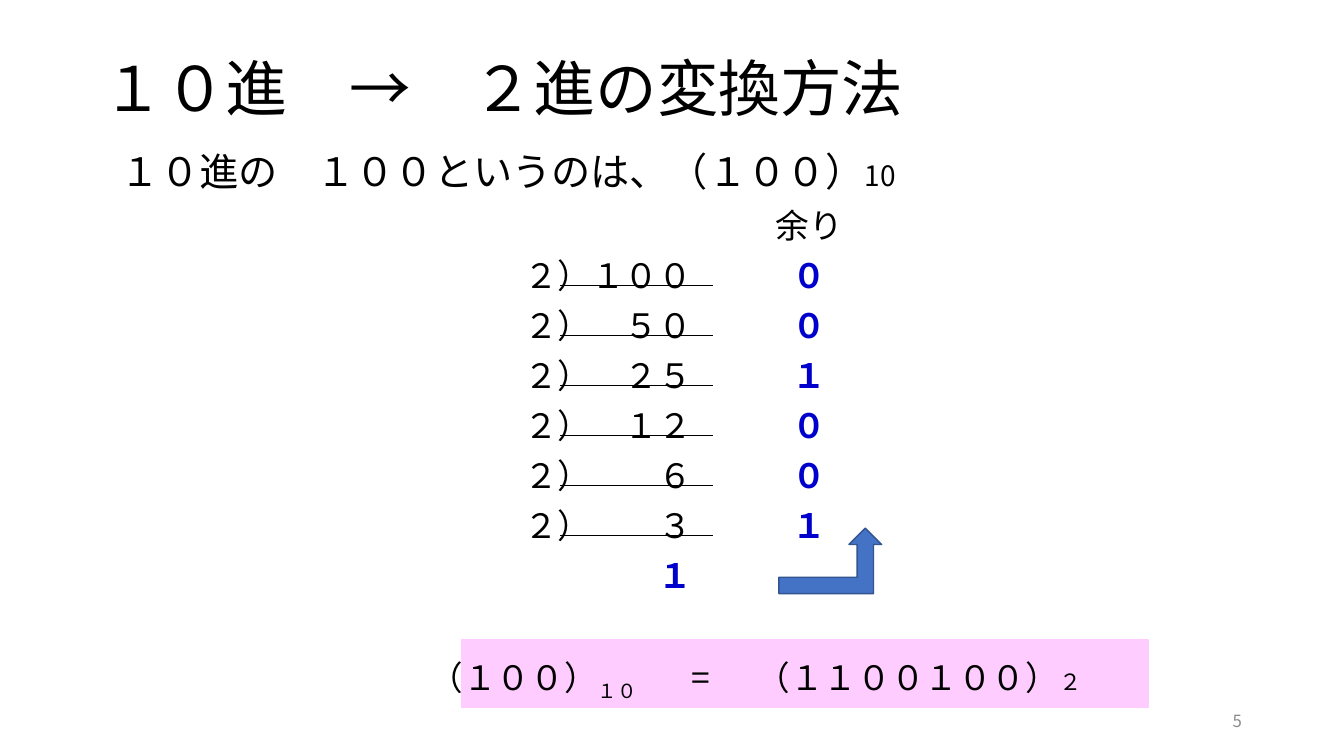
from lxml import etree
from pptx import Presentation
from pptx.dml.color import RGBColor
from pptx.enum.shapes import MSO_CONNECTOR, MSO_SHAPE
from pptx.enum.text import MSO_ANCHOR, PP_ALIGN
from pptx.oxml.ns import qn
from pptx.util import Cm, Pt

STRAIGHT = MSO_CONNECTOR.STRAIGHT
RECTANGLE = MSO_SHAPE.RECTANGLE
BENT_UP_ARROW = MSO_SHAPE.BENT_UP_ARROW
TOP, MIDDLE = MSO_ANCHOR.TOP, MSO_ANCHOR.MIDDLE
LEFT, RIGHT = PP_ALIGN.LEFT, PP_ALIGN.RIGHT

BLACK = RGBColor(0x00, 0x00, 0x00)
DIGIT_BLUE = RGBColor(0x00, 0x00, 0xCC)
PINK = RGBColor(0xFF, 0xCC, 0xFF)
ARROW_BLUE = RGBColor(0x44, 0x72, 0xC4)
ARROW_EDGE = RGBColor(0x32, 0x54, 0x91)
GRAY = RGBColor(0x8C, 0x8C, 0x8C)

JAPANESE = "Noto Sans CJK JP"
LATIN = "Arial"
ROW_PITCH = 1.26
FULL_WIDTH = str.maketrans("0123456789", "０１２３４５６７８９")


def wide(number):
    return str(number).translate(FULL_WIDTH)


class SlideWriter:
    def __init__(self, slide):
        self.slide = slide

    def shape(self, kind, left, top, width, height, fill, edge):
        shape = self.slide.shapes.add_shape(
            kind, Cm(left), Cm(top), Cm(width), Cm(height))
        shape.shadow.inherit = False
        shape.fill.solid()
        shape.fill.fore_color.rgb = fill
        shape.line.color.rgb = edge
        shape.line.width = Pt(1)

    def rule(self, left, right, y):
        rule = self.slide.shapes.add_connector(
            STRAIGHT, Cm(left), Cm(y), Cm(right), Cm(y))
        rule.line.color.rgb = BLACK
        rule.line.width = Pt(0.5)
        etree.SubElement(rule._element.spPr, qn("a:effectLst"))

    def text(self, left, top, width, height, paragraphs, spacing=Cm(ROW_PITCH),
             anchor=TOP, align=LEFT, tabs=()):
        frame = self.slide.shapes.add_textbox(
            Cm(left), Cm(top), Cm(width), Cm(height)).text_frame
        frame.word_wrap = True
        frame.vertical_anchor = anchor
        frame.margin_left = frame.margin_right = 0
        frame.margin_top = frame.margin_bottom = 0
        for index, runs in enumerate(paragraphs):
            paragraph = frame.add_paragraph() if index else frame.paragraphs[0]
            paragraph.alignment = align
            paragraph.line_spacing = spacing
            if tabs:
                self.tab_stops(paragraph, tabs)
            for run in runs:
                self.run(paragraph, *run)

    def tab_stops(self, paragraph, tabs):
        stops = etree.SubElement(paragraph._p.get_or_add_pPr(), qn("a:tabLst"))
        for position, side in tabs:
            etree.SubElement(stops, qn("a:tab"), pos=str(Cm(position)), algn=side)

    def run(self, paragraph, content, size=24, color=BLACK, bold=False,
            font=JAPANESE, baseline=0):
        run = paragraph.add_run()
        run.text = content
        run.font.size = Pt(size)
        run.font.bold = bold
        run.font.color.rgb = color
        run.font.name = font
        properties = run._r.get_or_add_rPr()
        etree.SubElement(properties, qn("a:ea"), typeface=JAPANESE)
        if baseline:
            properties.set("baseline", str(baseline * 1000))


def main():
    presentation = Presentation()
    presentation.slide_width = Cm(33.87)
    presentation.slide_height = Cm(19.05)
    writer = SlideWriter(
        presentation.slides.add_slide(presentation.slide_layouts[6]))

    writer.shape(RECTANGLE, 11.63, 16.13, 17.3, 1.7, PINK, PINK)
    writer.text(2.59, 0.48, 28.7, 3.68, [[("１０進　→　２進の変換方法", 44)]],
                spacing=0.9, anchor=MIDDLE)
    writer.text(3.05, 3.65, 28.7, ROW_PITCH,
                [[("１０進の　１００というのは、（１００）", 28), ("10", 20)]])

    division = [[("\t\t余り",)]]
    quotient = 100
    while quotient > 1:
        dividend = quotient
        quotient, remainder = divmod(dividend, 2)
        division.append([(f"２）\t{wide(dividend)}\t",),
                         (wide(remainder), 24, DIGIT_BLUE, True)])
    division.append([("\t",), (wide(quotient), 24, DIGIT_BLUE, True)])
    writer.text(13.21, 4.93, 9.5, ROW_PITCH * len(division), division,
                tabs=[(4.23, "r"), (7.18, "ctr")])
    for step in range(len(division) - 2):
        writer.rule(14.12, 17.98, 7.2 + ROW_PITCH * step)

    writer.shape(BENT_UP_ARROW, 19.63, 13.31, 2.59, 1.65, ARROW_BLUE, ARROW_EDGE)
    writer.text(10.83, 16.44, 18.1, ROW_PITCH, [[
        ("（１００）", 24, BLACK, False, LATIN),
        ("１０", 24, BLACK, False, LATIN, -25),
        ("\t=\t（１１００１００）",),
        ("２", 16),
    ]], tabs=[(6.6, "l"), (8.24, "l")])
    writer.text(23.93, 17.65, 7.37, 1.02, [[("5", 12, GRAY)]],
                spacing=1.0, anchor=MIDDLE, align=RIGHT)

    presentation.save("out.pptx")


if __name__ == "__main__":
    main()
